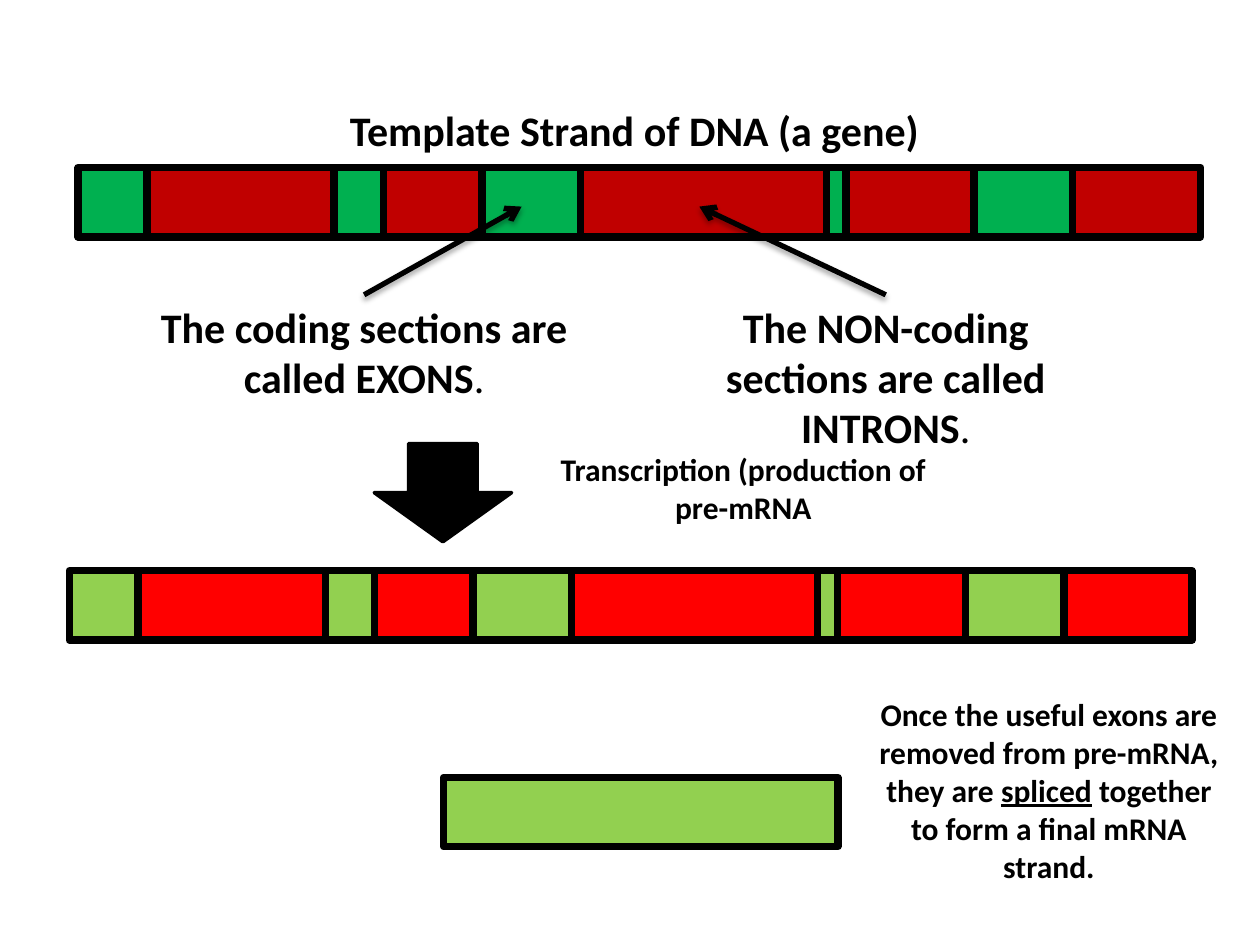
from lxml import etree
from pptx import Presentation
from pptx.dml.color import RGBColor
from pptx.enum.shapes import MSO_CONNECTOR, MSO_SHAPE
from pptx.enum.text import MSO_ANCHOR, MSO_AUTO_SIZE, PP_ALIGN
from pptx.oxml import parse_xml
from pptx.oxml.ns import nsdecls, qn
from pptx.util import Inches, Pt

RECT, DOWN = MSO_SHAPE.RECTANGLE, MSO_SHAPE.DOWN_ARROW
LINE = MSO_CONNECTOR.STRAIGHT
CENTER, TOP = PP_ALIGN.CENTER, MSO_ANCHOR.TOP
GROW = MSO_AUTO_SIZE.SHAPE_TO_FIT_TEXT

COLORS = {
    "ink": "000000",
    "dna_exon": "00B050",
    "dna_intron": "C00000",
    "rna_exon": "92D050",
    "rna_intron": "FF0000",
}
FONT = "Calibri"
PARTS = [7, 19, 5, 10, 10, 25, 2, 13, 10, 13]


def color(name):
    """Return the named colour."""
    return RGBColor.from_string(COLORS[name])


def add_block(slide, box, fill, kind=RECT, weight=4.25):
    """Add a filled shape with a black outline."""
    block = slide.shapes.add_shape(kind, *map(Inches, box))
    block.shadow.inherit = False
    block.fill.solid()
    block.fill.fore_color.rgb = color(fill)
    block.line.color.rgb = color("ink")
    block.line.width = Pt(weight)


def add_strand(slide, box, exon, intron):
    """Fill a box with alternating exons and introns."""
    left, top, width, height = box
    unit = width / sum(PARTS)
    for i, part in enumerate(PARTS):
        start = left + unit * sum(PARTS[:i])
        fill = intron if i % 2 else exon
        add_block(slide, (start, top, unit * part, height), fill)


def set_text(shape, runs, size):
    """Write centred runs, each a text with its bold and underline."""
    frame = shape.text_frame
    frame.word_wrap = True
    frame.auto_size = GROW
    frame.vertical_anchor = TOP
    para = frame.paragraphs[0]
    para.alignment = CENTER
    for text, bold, under in runs:
        run = para.add_run()
        run.text = text
        font = run.font
        font.name, font.size = FONT, Pt(size)
        font.bold, font.underline = bold, under
        font.color.rgb = color("ink")


def add_title(slide, box, text):
    """Place the title over the gene."""
    title = slide.shapes.title
    title.left, title.top, title.width, title.height = map(Inches, box)
    set_text(title, [(text, True, False)], 24)


def add_label(slide, box, runs, size):
    """Add a text box."""
    set_text(slide.shapes.add_textbox(*map(Inches, box)), runs, size)


def add_arrow(slide, start, end):
    """Add an open-headed arrow with a soft shadow."""
    arrow = slide.shapes.add_connector(LINE, *map(Inches, start + end))
    arrow.line.color.rgb = color("ink")
    arrow.line.width = Pt(3)
    etree.SubElement(arrow.line._get_or_add_ln(), qn("a:tailEnd"), type="arrow")
    arrow._element.spPr.append(parse_xml(
        f'<a:effectLst {nsdecls("a")}><a:outerShdw blurRad="40000" '
        'dist="23000" dir="5400000" rotWithShape="0">'
        f'<a:srgbClr val="{COLORS["ink"]}"><a:alpha val="35000"/></a:srgbClr>'
        '</a:outerShdw></a:effectLst>'))


def add_gene(slide, box):
    """Draw the DNA strand with its title and two callouts."""
    left, top, width, height = box
    add_strand(slide, box, "dna_exon", "dna_intron")
    add_title(slide, (left + 1.72, top - 0.55, 5.39, 0.5),
              "Template Strand of DNA (a gene)")
    notes = [
        ("The coding sections are called EXONS", 0.55, 0.91, 3.52),
        ("The NON-coding sections are called INTRONS", 4.69, 1.31, 4.93),
    ]
    base = top + 1.01
    for text, shift, tall, tip in notes:
        start = left + shift
        runs = [(text, True, False), (".", False, False)]
        add_label(slide, (start, base, 3.44, tall), runs, 24)
        add_arrow(slide, (start + 1.72, base), (left + tip, top + 0.31))


def add_step(slide, box):
    """Draw the transcription arrow and its label."""
    left, top, width, height = box
    add_block(slide, (left, top, 1.09, height), "ink", DOWN, 2)
    add_label(slide, (left + 1.33, top, width - 1.33, 0.71),
              [("Transcription (production of pre-mRNA", True, False)], 18)


def add_splice(slide, box):
    """Draw the final mRNA strand and its explanation."""
    left, top, width, height = box
    add_block(slide, (left, top + 0.7, 3.13, 0.55), "rna_exon")
    runs = [
        ("Once the useful exons are removed from pre-mRNA, they are ", True, False),
        ("spliced", True, True),
        (" together to form a final mRNA strand.", True, False),
    ]
    add_label(slide, (left + 3.36, top, width - 3.36, height), runs, 18)


def main():
    """Build the slide and save it."""
    deck = Presentation()
    deck.slide_width, deck.slide_height = Inches(10), Inches(7.5)
    slide = deck.slides.add_slide(deck.slide_layouts[5])
    add_gene(slide, (0.62, 1.33, 8.91, 0.55))
    add_step(slide, (2.97, 3.52, 4.53, 0.78))
    add_strand(slide, (0.55, 4.53, 8.91, 0.55), "rna_exon", "rna_intron")
    add_splice(slide, (3.52, 5.47, 6.25, 1.62))
    deck.save("out.pptx")


if __name__ == "__main__":
    main()
